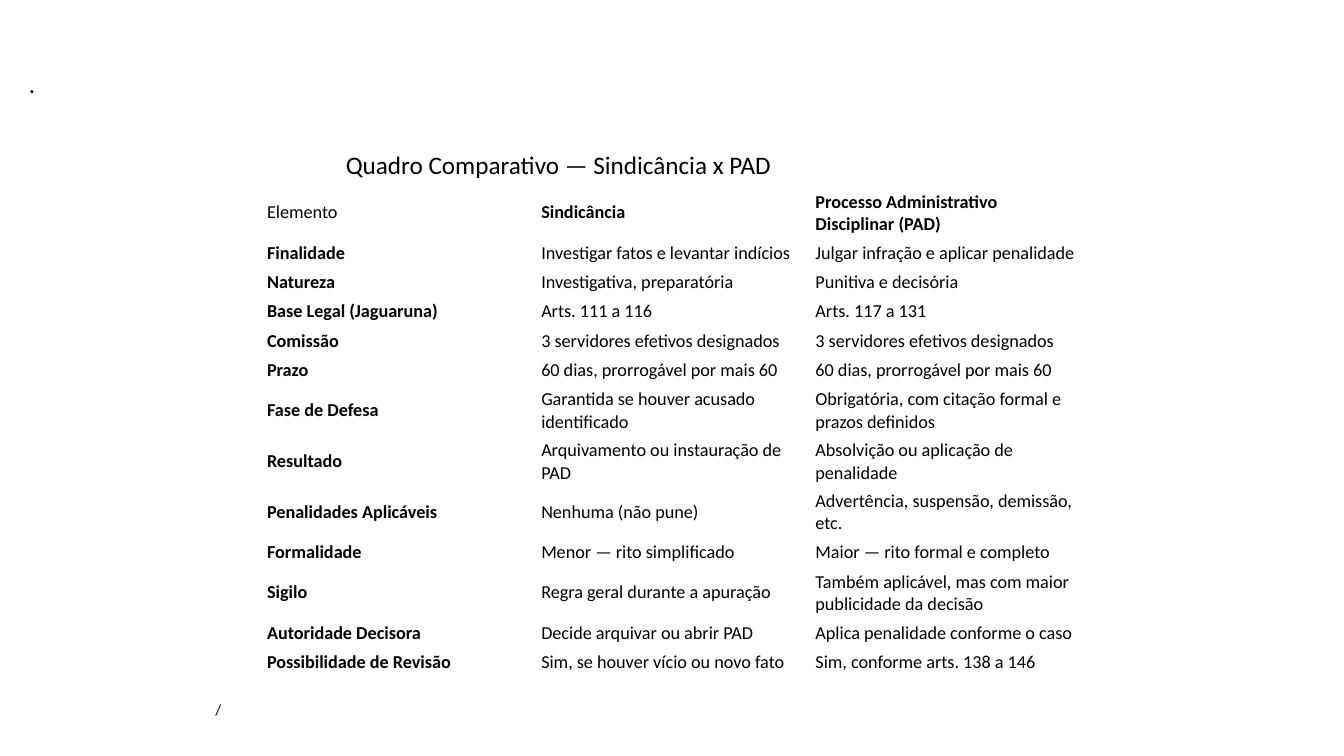
from dataclasses import dataclass

from pptx import Presentation
from pptx.dml.color import RGBColor
from pptx.enum.text import MSO_ANCHOR, MSO_AUTO_SIZE, PP_ALIGN
from pptx.shapes.autoshape import Shape
from pptx.slide import Slide
from pptx.table import _Cell
from pptx.text.text import _Paragraph
from pptx.util import Cm, Pt

COLOURS = {"text": "000000", "background": "FFFFFF"}
FONT = "Calibri"
COLUMN_WIDTH = 6.91
SINGLE_LINE_HEIGHT, DOUBLE_LINE_HEIGHT = 0.74, 1.28


@dataclass(frozen=True)
class Caption:
    text: str
    left: float
    top: float
    width: float
    height: float
    size: int


@dataclass(frozen=True)
class Comparison:
    element: str
    inquiry: str
    proceeding: str
    double_line: bool = False


HEADING = Caption("Quadro Comparativo — Sindicância x PAD", 8.46, 3.63, 16.94, 1.02, 18)
MARKS = [
    Caption("/", 5.18, 17.53, 23.5, 0.74, 11),
    Caption(".", 0.48, 1.6, 33.38, 1.02, 18),
]
COMPARISONS = [
    Comparison("Elemento", "Sindicância", "Processo Administrativo Disciplinar (PAD)", True),
    Comparison("Finalidade", "Investigar fatos e levantar indícios", "Julgar infração e aplicar penalidade"),
    Comparison("Natureza", "Investigativa, preparatória", "Punitiva e decisória"),
    Comparison("Base Legal (Jaguaruna)", "Arts. 111 a 116", "Arts. 117 a 131"),
    Comparison("Comissão", "3 servidores efetivos designados", "3 servidores efetivos designados"),
    Comparison("Prazo", "60 dias, prorrogável por mais 60", "60 dias, prorrogável por mais 60"),
    Comparison("Fase de Defesa", "Garantida se houver acusado identificado",
               "Obrigatória, com citação formal e prazos definidos", True),
    Comparison("Resultado", "Arquivamento ou instauração de PAD", "Absolvição ou aplicação de penalidade", True),
    Comparison("Penalidades Aplicáveis", "Nenhuma (não pune)", "Advertência, suspensão, demissão, etc.", True),
    Comparison("Formalidade", "Menor — rito simplificado", "Maior — rito formal e completo"),
    Comparison("Sigilo", "Regra geral durante a apuração",
               "Também aplicável, mas com maior publicidade da decisão", True),
    Comparison("Autoridade Decisora", "Decide arquivar ou abrir PAD", "Aplica penalidade conforme o caso"),
    Comparison("Possibilidade de Revisão", "Sim, se houver vício ou novo fato", "Sim, conforme arts. 138 a 146"),
]


def format_paragraph(paragraph: _Paragraph, size: int, bold: bool = False) -> None:
    paragraph.alignment = PP_ALIGN.LEFT
    paragraph.font.name = FONT
    paragraph.font.size = Pt(size)
    paragraph.font.bold = bold
    paragraph.font.color.rgb = RGBColor.from_string(COLOURS["text"])


def fill_caption(shape: Shape, caption: Caption) -> None:
    shape.left, shape.top = Cm(caption.left), Cm(caption.top)
    shape.width, shape.height = Cm(caption.width), Cm(caption.height)
    frame = shape.text_frame
    frame.text = caption.text
    frame.word_wrap = True
    frame.auto_size = MSO_AUTO_SIZE.SHAPE_TO_FIT_TEXT
    frame.vertical_anchor = MSO_ANCHOR.TOP
    format_paragraph(frame.paragraphs[0], caption.size)


def fill_cell(cell: _Cell, text: str, bold: bool) -> None:
    cell.text = text
    cell.fill.background()
    cell.vertical_anchor = MSO_ANCHOR.MIDDLE
    cell.margin_left = cell.margin_right = Cm(0.18)
    cell.margin_top = cell.margin_bottom = Cm(0.09)
    format_paragraph(cell.text_frame.paragraphs[0], 13, bold)


def draw_comparisons(slide: Slide, comparisons: list[Comparison]) -> None:
    heights = [DOUBLE_LINE_HEIGHT if item.double_line else SINGLE_LINE_HEIGHT for item in comparisons]
    table = slide.shapes.add_table(
        len(comparisons), 3, Cm(6.55), Cm(4.72), Cm(3 * COLUMN_WIDTH), Cm(sum(heights))
    ).table
    table.first_row = table.horz_banding = False
    for column in table.columns:
        column.width = Cm(COLUMN_WIDTH)
    for row_index, (item, height) in enumerate(zip(comparisons, heights)):
        table.rows[row_index].height = Cm(height)
        for column_index, text in enumerate((item.element, item.inquiry, item.proceeding)):
            bold = (row_index == 0) != (column_index == 0)
            fill_cell(table.cell(row_index, column_index), text, bold)


def main() -> None:
    """Build the slide comparing Sindicância and PAD."""
    presentation = Presentation()
    presentation.slide_width, presentation.slide_height = Cm(33.87), Cm(19.05)
    slide = presentation.slides.add_slide(presentation.slide_layouts[5])
    slide.background.fill.solid()
    slide.background.fill.fore_color.rgb = RGBColor.from_string(COLOURS["background"])
    for mark in MARKS:
        fill_caption(slide.shapes.add_textbox(0, 0, 0, 0), mark)
    fill_caption(slide.shapes.title, HEADING)
    draw_comparisons(slide, COMPARISONS)
    presentation.save("out.pptx")


if __name__ == "__main__":
    main()
